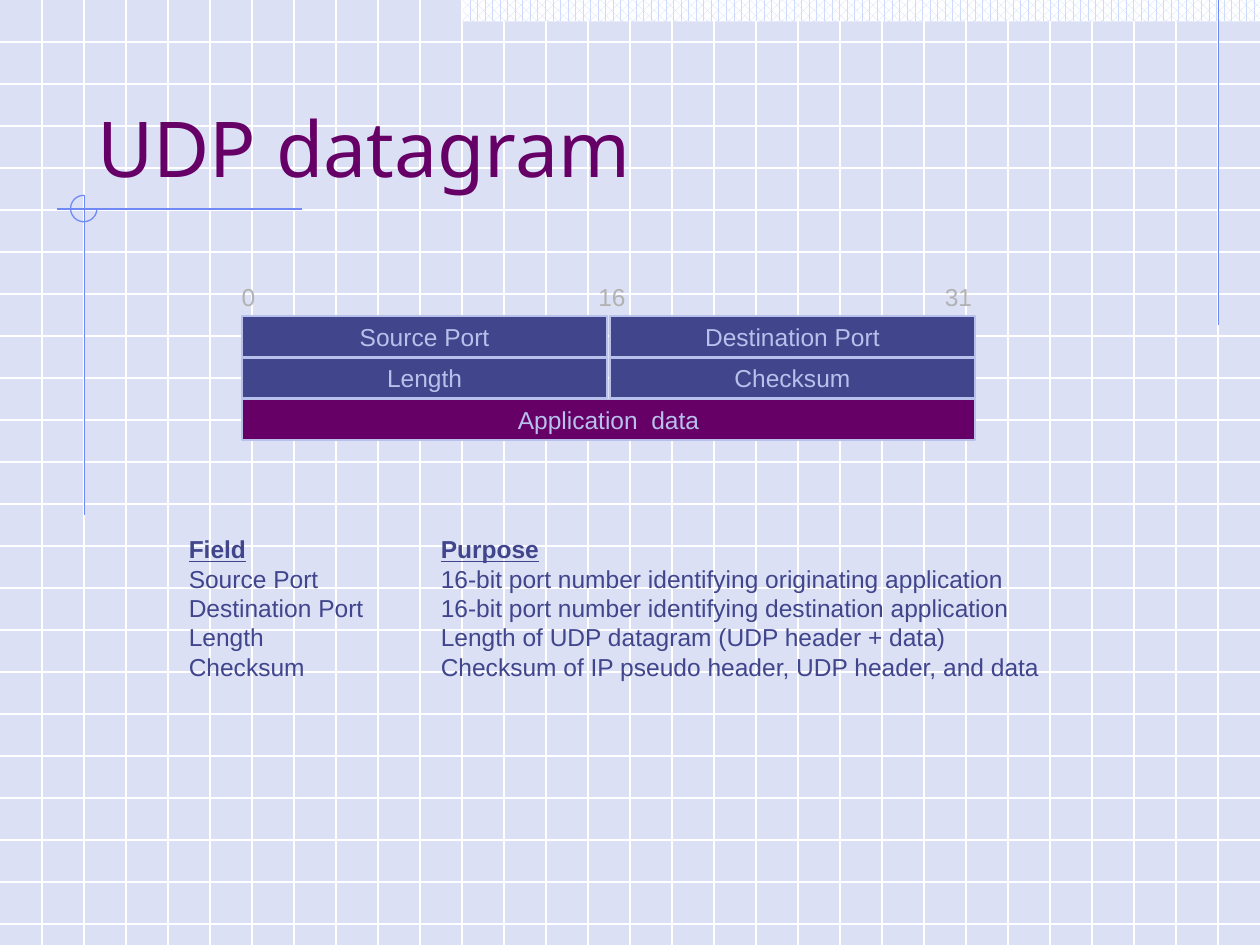
from lxml import etree
from pptx import Presentation
from pptx.dml.color import RGBColor
from pptx.enum.dml import MSO_PATTERN_TYPE
from pptx.enum.shapes import MSO_CONNECTOR, MSO_SHAPE
from pptx.enum.text import MSO_ANCHOR, MSO_AUTO_SIZE, PP_ALIGN
from pptx.oxml.ns import qn
from pptx.util import Inches, Pt

STRAIGHT = MSO_CONNECTOR.STRAIGHT
RECTANGLE, ARC = MSO_SHAPE.RECTANGLE, MSO_SHAPE.ARC
PERCENT_60 = MSO_PATTERN_TYPE.PERCENT_60
TOP, MIDDLE, BOTTOM = MSO_ANCHOR.TOP, MSO_ANCHOR.MIDDLE, MSO_ANCHOR.BOTTOM
LEFT, CENTER = PP_ALIGN.LEFT, PP_ALIGN.CENTER
NO_AUTOFIT = MSO_AUTO_SIZE.NONE

BACKGROUND = RGBColor(0xDB, 0xE0, 0xF5)
WHITE = RGBColor(0xFF, 0xFF, 0xFF)
PALE_BLUE = RGBColor(0xCF, 0xDB, 0xFD)
ACCENT_BLUE = RGBColor(0x6F, 0x89, 0xF7)
LAVENDER = RGBColor(0xB7, 0xC1, 0xEB)
NAVY = RGBColor(0x40, 0x45, 0x8C)
PURPLE = RGBColor(0x66, 0x00, 0x66)
GRAY = RGBColor(0xB2, 0xB2, 0xB2)

WIDTH, HEIGHT = 10, 7.5

prs = Presentation()
prs.slide_width, prs.slide_height = Inches(WIDTH), Inches(HEIGHT)
slide = prs.slides.add_slide(prs.slide_layouts[5])
shapes = slide.shapes
slide.background.fill.solid()
slide.background.fill.fore_color.rgb = BACKGROUND


def add_line(x1, y1, x2, y2, color):
    line = shapes.add_connector(STRAIGHT, Inches(x1), Inches(y1), Inches(x2), Inches(y2))
    line.line.color.rgb = color
    line.line.width = Pt(0.75)
    etree.SubElement(line._element.spPr, qn("a:effectLst"))


def write(shape, text, size=14, font="Arial", color=NAVY, align=LEFT, anchor=TOP,
          wrap=False, tab=None, line_spacing=None, bold_first=False):
    frame = shape.text_frame
    frame.auto_size = NO_AUTOFIT
    frame.word_wrap = wrap
    frame.vertical_anchor = anchor
    frame.margin_left = frame.margin_right = Inches(0.1)
    frame.margin_top = frame.margin_bottom = Inches(0.05)
    for i, content in enumerate(text.split("\n")):
        paragraph = frame.paragraphs[0] if i == 0 else frame.add_paragraph()
        paragraph.alignment = align
        if line_spacing:
            paragraph.line_spacing = line_spacing
        if tab:
            tabs = etree.SubElement(paragraph._p.get_or_add_pPr(), qn("a:tabLst"))
            etree.SubElement(tabs, qn("a:tab"), pos=str(tab), algn="l")
        # Tabs stay outside the underlined runs of the heading row
        for j, part in enumerate(content.split("\t")):
            if j:
                paragraph.add_run().text = "\t"
            run = paragraph.add_run()
            run.text = part
            if bold_first and i == 0:
                run.font.bold = run.font.underline = True
        for run in paragraph.runs:
            run.font.size = Pt(size)
            run.font.name = font
            run.font.color.rgb = color


# Background grid, three squares to the inch
for row in range(1, 23):
    add_line(0, row / 3, WIDTH, row / 3, WHITE)
for column in range(1, 30):
    add_line(column / 3, 0, column / 3, HEIGHT, WHITE)

# Patterned strip along the top
strip = shapes.add_shape(RECTANGLE, Inches(3.67), 0, Inches(6.33), Inches(0.17))
strip.shadow.inherit = False
strip.fill.patterned()
strip.fill.pattern = PERCENT_60
strip.fill.fore_color.rgb = PALE_BLUE
strip.fill.back_color.rgb = WHITE
strip.line.fill.background()

# Accent lines with a three-quarter circle at their crossing
add_line(9.67, 0, 9.67, 2.58, ACCENT_BLUE)
add_line(2.4, 1.66, 0.45, 1.66, ACCENT_BLUE)
add_line(0.67, 1.55, 0.67, 4.09, ACCENT_BLUE)
crossing = shapes.add_shape(ARC, Inches(0.56), Inches(1.55), Inches(0.21), Inches(0.21))
crossing.shadow.inherit = False
crossing.adjustments[0] = 0
crossing.adjustments[1] = 162  # 270 degrees
crossing.fill.background()
crossing.line.color.rgb = ACCENT_BLUE
crossing.line.width = Pt(0.75)

# Title, brought in front of the grid
title = shapes.title
title.left, title.top = Inches(0.67), Inches(0.33)
title.width, title.height = Inches(8.5), Inches(1.25)
write(title, "UDP datagram", size=44, font="Noto Sans", color=PURPLE, anchor=BOTTOM, wrap=True)
shapes._spTree.append(title._element)

# Datagram fields: column, row, width, fill
FIELDS = [
    ("Source Port", 0, 0, 2.9, NAVY),
    ("Destination Port", 1, 0, 2.9, NAVY),
    ("Length", 0, 1, 2.9, NAVY),
    ("Checksum", 1, 1, 2.9, NAVY),
    ("Application  data", 0, 2, 5.82, PURPLE),
]
for name, column, row, width, color in FIELDS:
    field = shapes.add_shape(RECTANGLE, Inches(1.92 + 2.92 * column), Inches(2.51 + 0.33 * row),
                             Inches(width), Inches(0.32))
    field.shadow.inherit = False
    field.fill.solid()
    field.fill.fore_color.rgb = color
    field.line.color.rgb = LAVENDER
    field.line.width = Pt(1)
    write(field, name, color=LAVENDER, align=CENTER, anchor=MIDDLE)

# Bit positions above the fields
for bit, left, width in [("0", 1.82, 0.31), ("16", 4.65, 0.42), ("31", 7.4, 0.42)]:
    label = shapes.add_textbox(Inches(left), Inches(2.19), Inches(width), Inches(0.33))
    write(label, bit, color=GRAY)

# Purpose of each field
PURPOSES = [
    ("Field", "Purpose"),
    ("Source Port", "16-bit port number identifying originating application"),
    ("Destination Port", "16-bit port number identifying destination application"),
    ("Length", "Length of UDP datagram (UDP header + data)"),
    ("Checksum", "Checksum of IP pseudo header, UDP header, and data"),
]
purposes = shapes.add_textbox(Inches(1.4), Inches(4.19), Inches(6.97), Inches(1.26))
write(purposes, "\n".join("\t".join(pair) for pair in PURPOSES),
      tab=Inches(2), line_spacing=Pt(16.8), bold_first=True)

prs.save("out.pptx")
